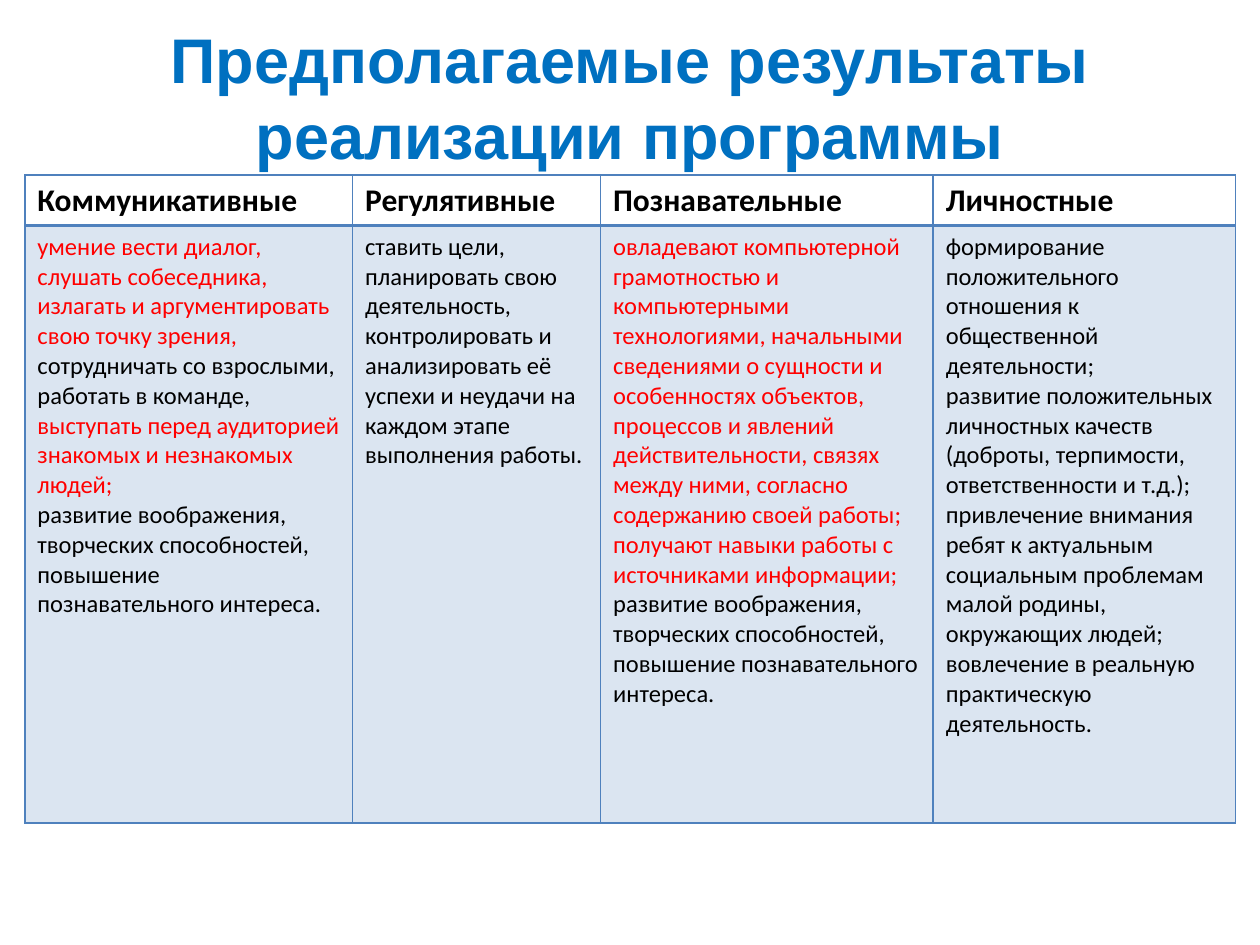
from dataclasses import dataclass

from lxml import etree
from pptx import Presentation
from pptx.dml.color import RGBColor
from pptx.enum.text import MSO_ANCHOR, PP_ALIGN
from pptx.oxml.ns import qn
from pptx.util import Pt

CENTER = PP_ALIGN.CENTER
MIDDLE = MSO_ANCHOR.MIDDLE
BLANK_LAYOUT = 6


@dataclass(frozen=True)
class Theme:
    title_color: str = "0070C0"
    text_color: str = "000000"
    accent_color: str = "FF0000"
    table_color: str = "4F81BD"
    fill_opacity: int = 20
    title_size: int = 36
    header_size: int = 18
    body_size: int = 14
    title_font: str = "Arial"
    table_font: str = "Calibri"
    thin_line: int = 1
    thick_line: int = 2


THEME = Theme()
TEXT, ACCENT = THEME.text_color, THEME.accent_color

TITLE = "Предполагаемые результаты реализации программы"
IMAGINATION = "развитие воображения, творческих способностей, повышение познавательного интереса."

COLUMNS = [
    ("Коммуникативные", 187.2, [
        [("умение вести диалог, слушать собеседника, излагать и аргументировать "
          "свою точку зрения, ", ACCENT),
         ("сотрудничать со взрослыми, работать в команде, ", TEXT),
         ("выступать перед аудиторией знакомых и незнакомых людей;", ACCENT)],
        [(IMAGINATION, TEXT)],
    ]),
    ("Регулятивные", 141.8, [
        [("ставить цели, планировать свою деятельность, контролировать и "
          "анализировать её успехи и неудачи на каждом этапе выполнения работы.", TEXT)],
    ]),
    ("Познавательные", 190.1, [
        [("овладевают компьютерной грамотностью и компьютерными технологиями, "
          "начальными сведениями о сущности и особенностях объектов, процессов и "
          "явлений действительности, связях между ними, согласно содержанию своей "
          "работы; получают навыки работы с источниками информации; ", ACCENT),
         (IMAGINATION, TEXT)],
    ]),
    ("Личностные", 172.8, [
        [("формирование положительного отношения к общественной деятельности;", TEXT)],
        [("развитие положительных личностных качеств (доброты, терпимости, "
          "ответственности и т.д.);", TEXT)],
        [("привлечение внимания ребят к актуальным социальным проблемам малой "
          "родины, окружающих людей;", TEXT)],
        [("вовлечение в реальную практическую деятельность.", TEXT)],
    ]),
]
ROW_HEIGHTS = (28.8, 341.3)


def add_span(para, text, color, **formats):
    span = para.add_run()
    span.text = text
    span.font.color.rgb = RGBColor.from_string(color)
    for name, value in formats.items():
        setattr(span.font, name, value)


def add_title(page):
    box = page.shapes.add_textbox(Pt(36), Pt(21.6), Pt(648), Pt(67))
    frame = box.text_frame
    for name, value in {"word_wrap": True, "vertical_anchor": MIDDLE}.items():
        setattr(frame, name, value)
    para = frame.paragraphs[0]
    para.alignment = CENTER
    add_span(para, TITLE, THEME.title_color, name=THEME.title_font,
             size=Pt(THEME.title_size), bold=True)


def set_borders(cell, top, bottom):
    properties = cell._tc.get_or_add_tcPr()
    widths = {"L": THEME.thin_line, "R": THEME.thin_line, "T": top, "B": bottom}
    for side, width in widths.items():
        line = etree.SubElement(properties, qn(f"a:ln{side}"), w=str(Pt(width)))
        fill = etree.SubElement(line, qn("a:solidFill"))
        etree.SubElement(fill, qn("a:srgbClr"), val=THEME.table_color)


def tint_cell(cell):
    cell.fill.solid()
    cell.fill.fore_color.rgb = RGBColor.from_string(THEME.table_color)
    color = cell._tc.tcPr.find(qn("a:solidFill")).find(qn("a:srgbClr"))
    etree.SubElement(color, qn("a:alpha"), val=str(THEME.fill_opacity * 1000))


def fill_cell(cell, paragraphs, size, bold):
    frame = cell.text_frame
    for index, spans in enumerate(paragraphs):
        para = frame.add_paragraph() if index else frame.paragraphs[0]
        for text, color in spans:
            add_span(para, text, color, name=THEME.table_font, size=Pt(size), bold=bold)


def add_results_table(page):
    total_width = sum(width for _, width, _ in COLUMNS)
    table = page.shapes.add_table(len(ROW_HEIGHTS), len(COLUMNS), Pt(14.2), Pt(100.1),
                                  Pt(total_width), Pt(sum(ROW_HEIGHTS))).table
    table.horz_banding = False
    for row, height in zip(table.rows, ROW_HEIGHTS):
        row.height = Pt(height)
    for index, (heading, width, paragraphs) in enumerate(COLUMNS):
        table.columns[index].width = Pt(width)
        header, body = table.cell(0, index), table.cell(1, index)
        set_borders(header, THEME.thin_line, THEME.thick_line)
        header.fill.background()
        fill_cell(header, [[(heading, TEXT)]], THEME.header_size, True)
        set_borders(body, THEME.thick_line, THEME.thin_line)
        tint_cell(body)
        fill_cell(body, paragraphs, THEME.body_size, False)


def main():
    deck = Presentation()
    deck.slide_width, deck.slide_height = Pt(720), Pt(540)
    page = deck.slides.add_slide(deck.slide_layouts[BLANK_LAYOUT])
    add_title(page)
    add_results_table(page)
    deck.save("out.pptx")


if __name__ == "__main__":
    main()
